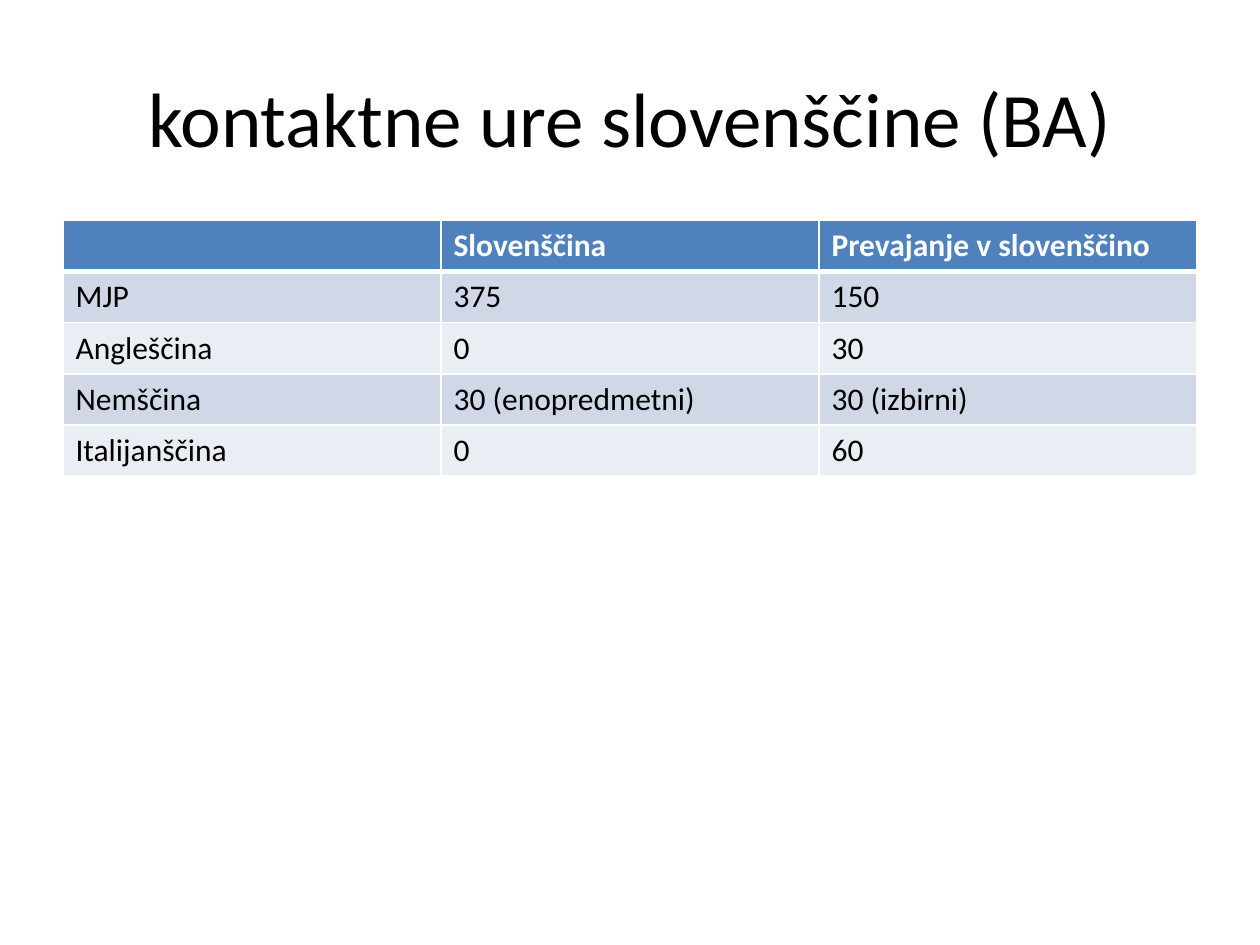
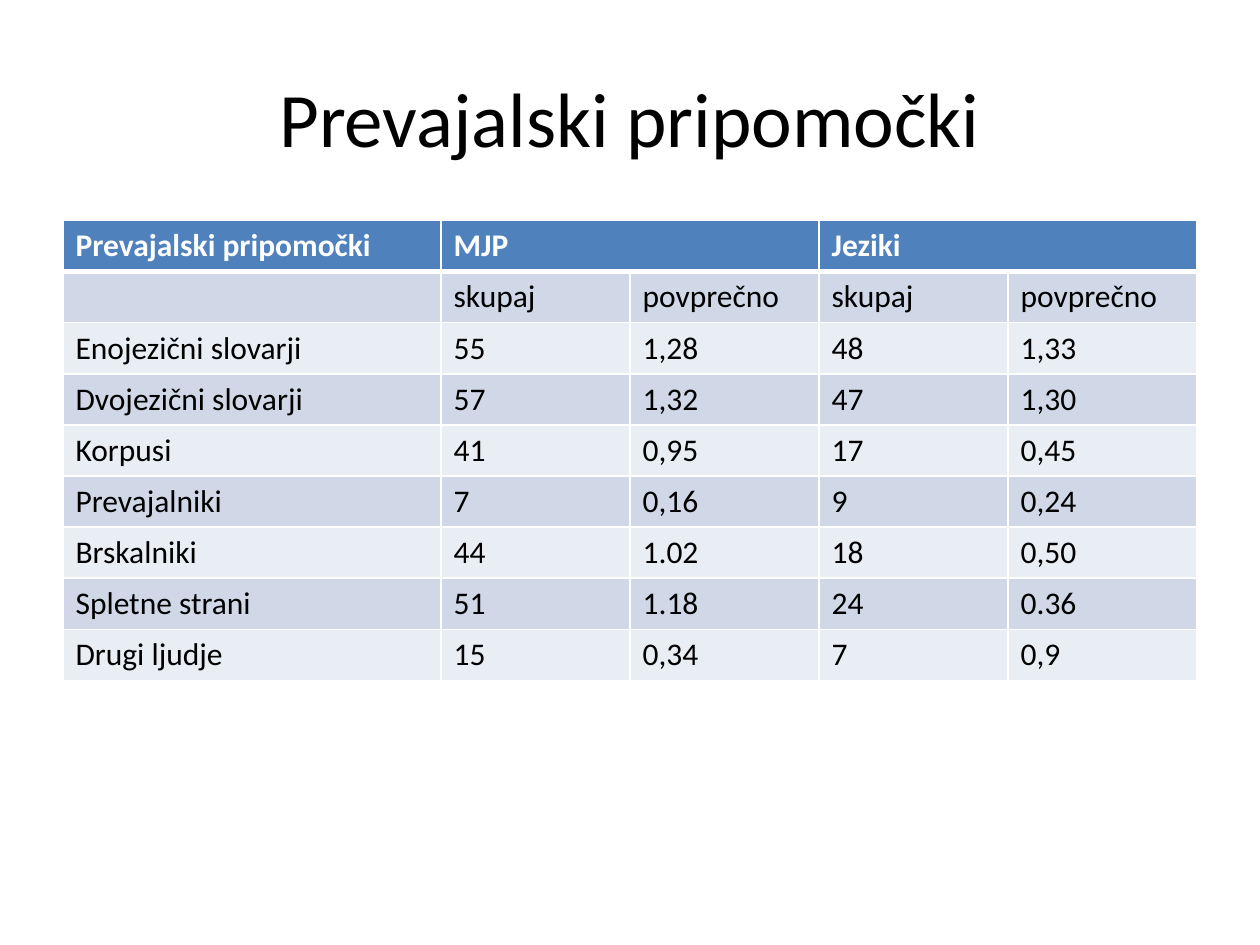
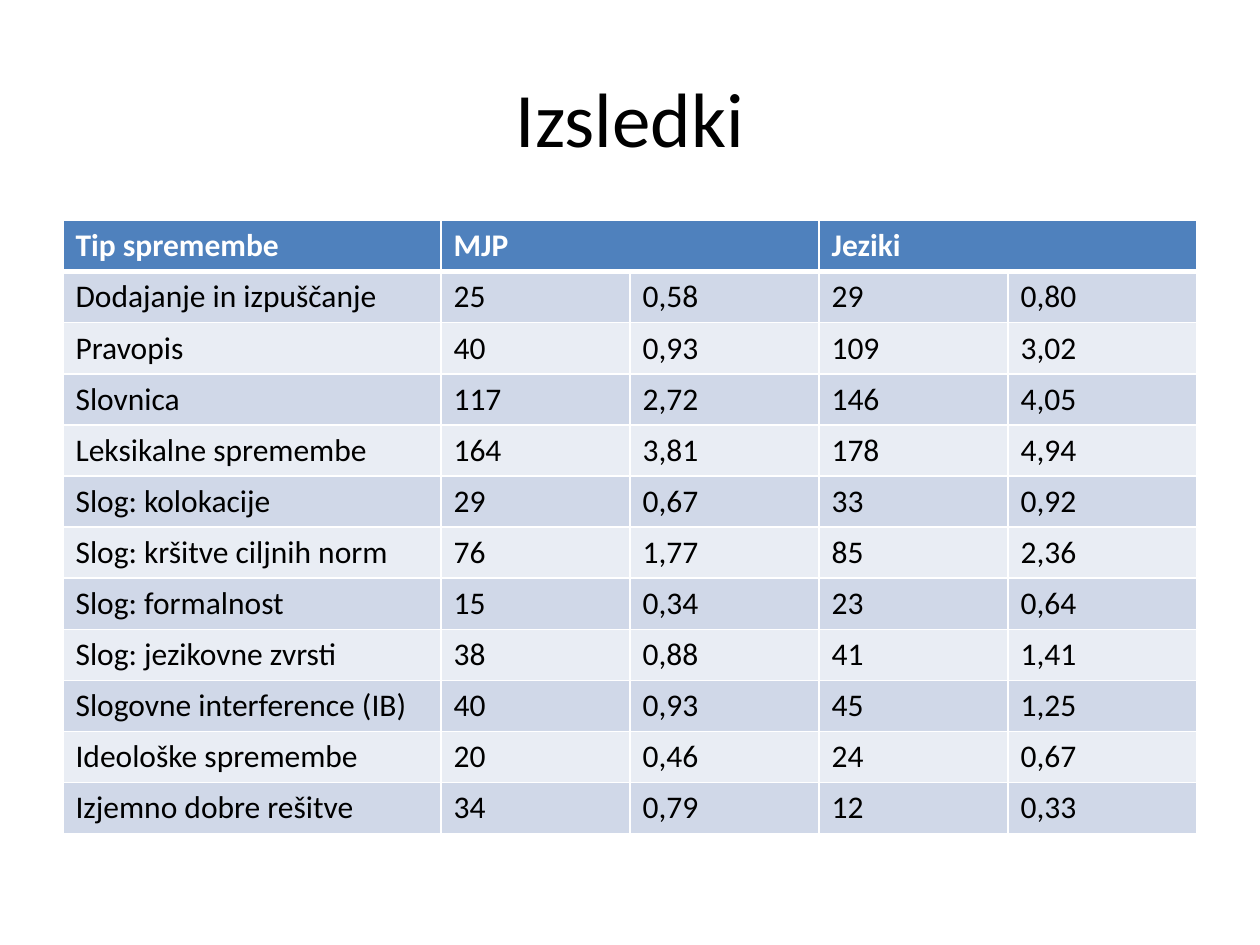
import dataclasses

import lxml.etree
import pptx
import pptx.dml.color
import pptx.enum.text
import pptx.oxml.ns
import pptx.util

Pt = pptx.util.Pt
RGB = pptx.dml.color.RGBColor.from_string
ALIGN = pptx.enum.text.PP_ALIGN
ANCHOR = pptx.enum.text.MSO_ANCHOR

# A None in a header row continues the heading to its left.
SLIDES = [
    ("kontaktne ure slovenščine (BA)", (216, 216, 216), [
        ("", "Slovenščina", "Prevajanje v slovenščino"),
        ("MJP", "375", "150"),
        ("Angleščina", "0", "30"),
        ("Nemščina", "30 (enopredmetni)", "30 (izbirni)"),
        ("Italijanščina", "0", "60"),
    ]),
    ("Prevajalski pripomočki", (216, 108, 108, 108, 108), [
        ("Prevajalski pripomočki", "MJP", None, "Jeziki", None),
        ("", "skupaj", "povprečno", "skupaj", "povprečno"),
        ("Enojezični slovarji", "55", "1,28", "48", "1,33"),
        ("Dvojezični slovarji", "57", "1,32", "47", "1,30"),
        ("Korpusi", "41", "0,95", "17", "0,45"),
        ("Prevajalniki", "7", "0,16", "9", "0,24"),
        ("Brskalniki", "44", "1.02", "18", "0,50"),
        ("Spletne strani", "51", "1.18", "24", "0.36"),
        ("Drugi ljudje", "15", "0,34", "7", "0,9"),
    ]),
    ("Izsledki", (216, 108, 108, 108, 108), [
        ("Tip spremembe", "MJP", None, "Jeziki", None),
        ("Dodajanje in izpuščanje", "25", "0,58", "29", "0,80"),
        ("Pravopis", "40", "0,93", "109", "3,02"),
        ("Slovnica", "117", "2,72", "146", "4,05"),
        ("Leksikalne spremembe", "164", "3,81", "178", "4,94"),
        ("Slog: kolokacije", "29", "0,67", "33", "0,92"),
        ("Slog: kršitve ciljnih norm", "76", "1,77", "85", "2,36"),
        ("Slog: formalnost", "15", "0,34", "23", "0,64"),
        ("Slog: jezikovne zvrsti", "38", "0,88", "41", "1,41"),
        ("Slogovne interference (IB)", "40", "0,93", "45", "1,25"),
        ("Ideološke spremembe", "20", "0,46", "24", "0,67"),
        ("Izjemno dobre rešitve", "34", "0,79", "12", "0,33"),
    ]),
]


@dataclasses.dataclass(frozen=True)
class Theme:
    font: str = "Calibri"
    title_size: int = 44
    cell_size: int = 18
    ink: str = "000000"
    paper: str = "FFFFFF"
    header: str = "4F81BD"
    bands: tuple = ("E9EDF4", "D0D8E8")
    rule: int = 1
    header_rule: int = 3


THEME = Theme()
WIDTH, HEIGHT = 720, 540
LEFT, CONTENT_WIDTH = 36, 648
TITLE_TOP, TITLE_HEIGHT = 21.6, 90
TABLE_TOP, ROW_HEIGHT = 126, 29.2


def write(tf, text, *, size, color=THEME.ink, bold=False, align=ALIGN.LEFT):
    p = tf.paragraphs[0]
    p.alignment = align
    r = p.add_run()
    r.text = text
    r.font.name, r.font.size, r.font.bold = THEME.font, Pt(size), bold
    r.font.color.rgb = RGB(color)


def add_title(s, text):
    sp = s.shapes.add_textbox(Pt(LEFT), Pt(TITLE_TOP), Pt(CONTENT_WIDTH), Pt(TITLE_HEIGHT))
    tf = sp.text_frame
    tf.word_wrap = True
    tf.vertical_anchor = ANCHOR.MIDDLE
    write(tf, text, size=THEME.title_size, align=ALIGN.CENTER)


def set_borders(cell, top, bottom):
    """Rule all four sides; the schema wants the lines before the fill."""
    qn = pptx.oxml.ns.qn
    tc_pr = cell._tc.get_or_add_tcPr()
    sides = {"L": THEME.rule, "R": THEME.rule, "T": top, "B": bottom}
    for i, (side, width) in enumerate(sides.items()):
        ln = lxml.etree.Element(qn("a:ln" + side), w=str(Pt(width)))
        fill = lxml.etree.SubElement(ln, qn("a:solidFill"))
        lxml.etree.SubElement(fill, qn("a:srgbClr"), val=THEME.paper)
        tc_pr.insert(i, ln)


def add_table(s, widths, rows):
    table = s.shapes.add_table(
        len(rows), len(widths), Pt(LEFT), Pt(TABLE_TOP),
        Pt(sum(widths)), Pt(ROW_HEIGHT * len(rows))).table
    for column, width in zip(table.columns, widths):
        column.width = Pt(width)
    for i, row in enumerate(rows):
        table.rows[i].height = Pt(ROW_HEIGHT)
        head = i == 0
        for j, text in enumerate(row):
            cell = table.cell(i, j)
            cell.fill.solid()
            cell.fill.fore_color.rgb = RGB(THEME.header if head else THEME.bands[i % 2])
            set_borders(cell, top=THEME.header_rule if i == 1 else THEME.rule,
                        bottom=THEME.header_rule if head else THEME.rule)
            if text is None:
                table.cell(i, j - 1).merge(cell)
            elif text:
                write(cell.text_frame, text, size=THEME.cell_size, bold=head,
                      color=THEME.paper if head else THEME.ink)


def main():
    prs = pptx.Presentation()
    prs.slide_width, prs.slide_height = Pt(WIDTH), Pt(HEIGHT)
    for title, widths, rows in SLIDES:
        s = prs.slides.add_slide(prs.slide_layouts[6])
        add_title(s, title)
        add_table(s, widths, rows)
    prs.save("out.pptx")


if __name__ == "__main__":
    main()
